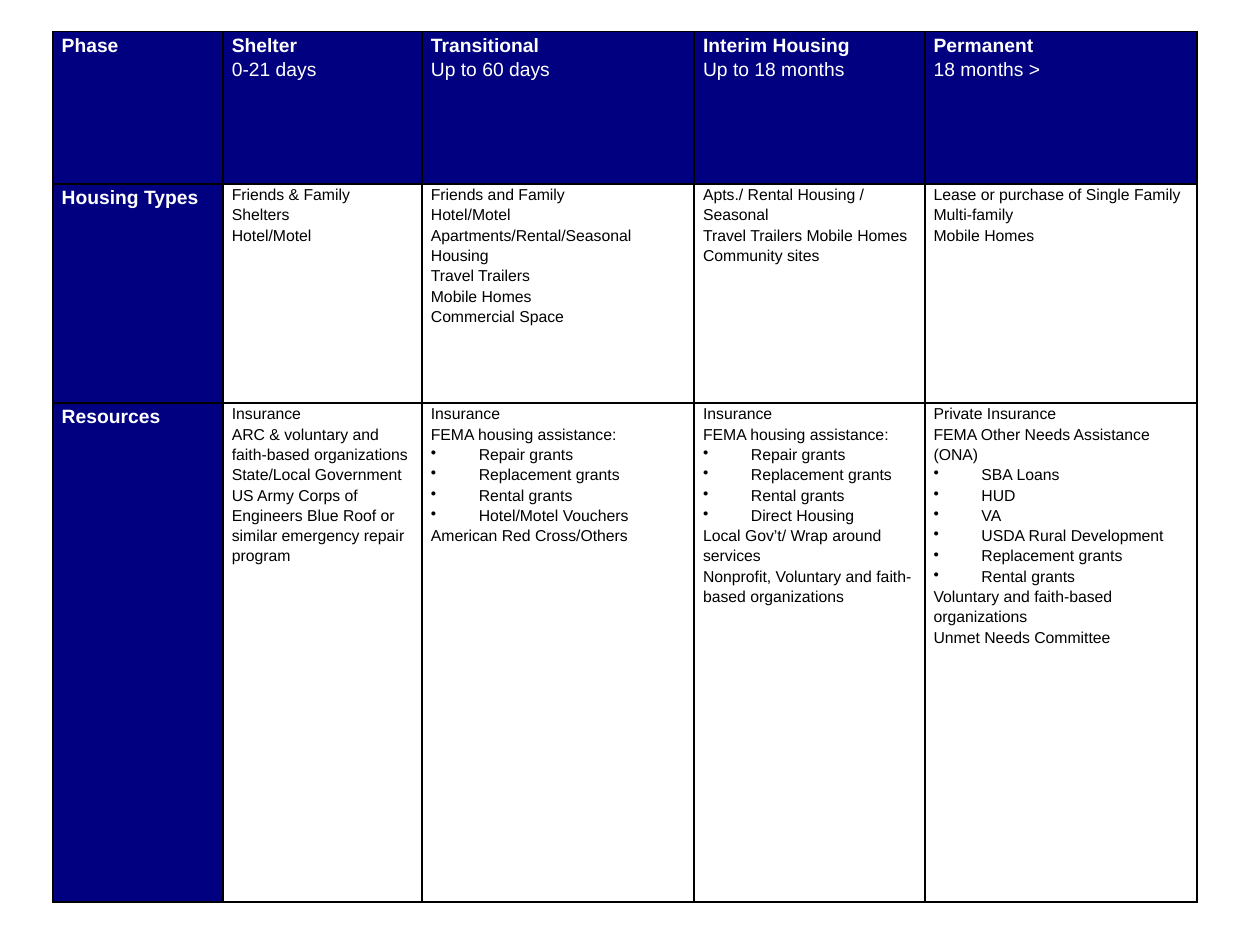
from dataclasses import dataclass

from lxml.etree import SubElement
from pptx import Presentation
from pptx.dml.color import RGBColor as RGB
from pptx.oxml.ns import qn
from pptx.util import Inches, Pt


@dataclass(frozen=True)
class Theme:
    font: str = "Arial"
    header_fill: RGB = RGB(0x00, 0x00, 0x80)
    header_text: RGB = RGB(0xFF, 0xFF, 0xFF)
    body_text: RGB = RGB(0x00, 0x00, 0x00)
    border: str = "000000"
    border_width: int = Pt(1)
    header_size: int = Pt(11)
    body_size: int = Pt(9)
    line_spacing: float = 1.15
    cell_margin: int = Inches(0.07)
    bullet_indent: int = Inches(0.38)


# Percentages of the slide's width and height
LEFT, TOP = 4.2, 3.35
COLUMNS = [13.5, 15.8, 21.6, 18.3, 21.6]
ROWS = [16.1, 23.2, 52.8]

BULLET = "•"
PHASES = [
    ["Phase"],
    ["Shelter", "0-21 days"],
    ["Transitional", "Up to 60 days"],
    ["Interim Housing", "Up to 18 months"],
    ["Permanent", "18 months >"],
]
HOUSING_TYPES = [
    ["Housing Types"],
    ["Friends & Family", "Shelters", "Hotel/Motel"],
    ["Friends and Family", "Hotel/Motel", "Apartments/Rental/Seasonal Housing",
     "Travel Trailers", "Mobile Homes", "Commercial Space"],
    ["Apts./ Rental Housing / Seasonal", "Travel Trailers Mobile Homes",
     "Community sites"],
    ["Lease or purchase of Single Family", "Multi-family", "Mobile Homes"],
]
FEMA_HELP = ["Insurance", "FEMA housing assistance:", "•Repair grants",
             "•Replacement grants", "•Rental grants"]
RESOURCES = [
    ["Resources"],
    ["Insurance", "ARC & voluntary and faith-based organizations",
     "State/Local Government",
     "US Army Corps of Engineers Blue Roof or similar emergency repair program"],
    FEMA_HELP + ["•Hotel/Motel Vouchers", "American Red Cross/Others"],
    FEMA_HELP + ["•Direct Housing", "Local Gov’t/ Wrap around services",
                 "Nonprofit, Voluntary and faith-based organizations"],
    ["Private Insurance", "FEMA Other Needs Assistance (ONA)", "•SBA Loans",
     "•HUD", "•VA", "•USDA Rural Development", "•Replacement grants",
     "•Rental grants", "Voluntary and faith-based organizations",
     "Unmet Needs Committee"],
]


class SlideBuilder:
    def __init__(self, prs, theme):
        self.prs, self.theme = prs, theme
        self.slide = prs.slides.add_slide(prs.slide_layouts[6])

    def x(self, percent):
        return round(self.prs.slide_width * percent / 100)

    def y(self, percent):
        return round(self.prs.slide_height * percent / 100)

    def table(self, left, top, columns, rows, content):
        """Draw a grid whose first row and first column are headers."""
        table = self.slide.shapes.add_table(
            len(rows), len(columns), self.x(left), self.y(top),
            self.x(sum(columns)), self.y(sum(rows))).table
        table.first_row = table.horz_banding = False
        for column, width in zip(table.columns, columns):
            column.width = self.x(width)
        for row, height in zip(table.rows, rows):
            row.height = self.y(height)
        for i, texts in enumerate(content):
            for j, lines in enumerate(texts):
                self.cell(table.cell(i, j), lines, i == 0 or j == 0)

    def cell(self, cell, lines, header):
        self.borders(cell)
        cell.margin_left = cell.margin_right = self.theme.cell_margin
        cell.margin_top = cell.margin_bottom = 0
        if header:
            cell.fill.solid()
            cell.fill.fore_color.rgb = self.theme.header_fill
        else:
            cell.fill.background()
        tf = cell.text_frame
        tf.text = "\n".join(line.lstrip(BULLET) for line in lines)
        for n, (p, line) in enumerate(zip(tf.paragraphs, lines)):
            if line.startswith(BULLET):
                self.bullet(p)
            self.format(p, header, bold=header and n == 0)

    def format(self, p, header, bold):
        theme = self.theme
        p.line_spacing = theme.line_spacing
        for r in p.runs:
            r.font.name = theme.font
            r.font.size = theme.header_size if header else theme.body_size
            r.font.color.rgb = theme.header_text if header else theme.body_text
            r.font.bold = bold

    def bullet(self, p):
        indent = self.theme.bullet_indent
        pPr = p._p.get_or_add_pPr()
        pPr.set("marL", str(indent))
        pPr.set("indent", str(-indent))
        SubElement(pPr, qn("a:buChar"), char=BULLET)

    def borders(self, cell):
        tcPr = cell._tc.get_or_add_tcPr()
        for side in ("L", "R", "T", "B"):
            ln = SubElement(tcPr, qn(f"a:ln{side}"), w=str(self.theme.border_width))
            fill = SubElement(ln, qn("a:solidFill"))
            SubElement(fill, qn("a:srgbClr"), val=self.theme.border)


def main():
    prs = Presentation()
    prs.slide_width, prs.slide_height = Inches(10), Inches(7.5)
    builder = SlideBuilder(prs, Theme())
    builder.table(LEFT, TOP, COLUMNS, ROWS, [PHASES, HOUSING_TYPES, RESOURCES])
    prs.save("out.pptx")


if __name__ == "__main__":
    main()
